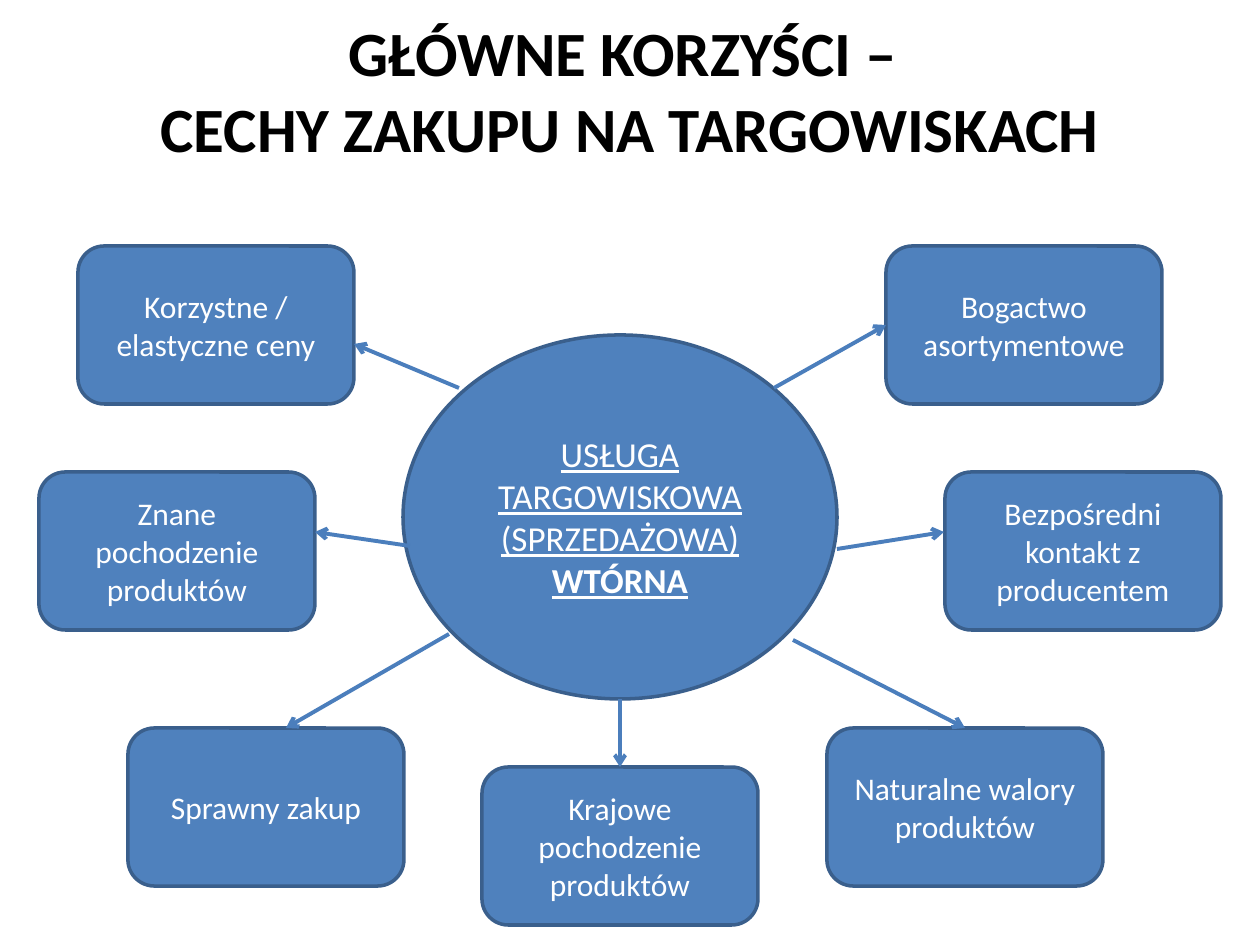
from dataclasses import dataclass
from typing import Optional

from lxml import etree
from pptx import Presentation
from pptx.dml.color import RGBColor
from pptx.enum import shapes, text
from pptx.oxml import ns
from pptx.util import Emu, Pt

PX_PER_INCH = 126
BOX_WIDTH, BOX_HEIGHT = 276, 158
FILL, OUTLINE, ARROW = "4F81BD", "3A5F8C", "4B7EBC"
WHITE, BLACK = "FFFFFF", "000000"
TOP, LEFT = 0, 1


@dataclass(frozen=True)
class Benefit:
    label: str
    left: int
    top: int
    arrow_start: tuple[int, int]
    arrow_end: tuple[int, int]
    joined_side: Optional[int] = None


BENEFITS = [
    Benefit("Korzystne / elastyczne ceny", 78, 246, (459, 388), (354, 344)),
    Benefit("Znane pochodzenie produktów", 39, 472, (410, 546), (315, 532)),
    Benefit("Bezpośredni kontakt z producentem", 945, 472, (837, 549), (944, 532)),
    Benefit("Bogactwo asortymentowe", 886, 246, (774, 388), (886, 325), LEFT),
    Benefit("Krajowe pochodzenie produktów", 482, 767, (620, 699), (620, 767), TOP),
    Benefit("Naturalne walory produktów", 827, 728, (793, 640), (965, 728), TOP),
    Benefit("Sprawny zakup", 128, 728, (449, 634), (286, 728)),
]


def px(length: int) -> Emu:
    return Emu(round(length * 914400 / PX_PER_INCH))


def color(value: str) -> RGBColor:
    return RGBColor.from_string(value)


def write(shape, paragraphs: list[str], size: int, font_color: str, **formats) -> None:
    """Fill a shape with centred paragraphs that share one format."""
    frame = shape.text_frame
    frame.word_wrap = True
    frame.vertical_anchor = text.MSO_ANCHOR.MIDDLE
    font_values = {"name": "Calibri", "size": Pt(size), **formats}
    for index, content in enumerate(paragraphs):
        paragraph = frame.add_paragraph() if index else frame.paragraphs[0]
        paragraph.text = content
        paragraph.alignment = text.PP_ALIGN.CENTER
        for run in paragraph.runs:
            run.font.color.rgb = color(font_color)
            for name, value in font_values.items():
                setattr(run.font, name, value)


def add_block(slide, kind, left: int, top: int, width: int, height: int):
    shape = slide.shapes.add_shape(kind, px(left), px(top), px(width), px(height))
    shape.shadow.inherit = False
    shape.fill.solid()
    shape.fill.fore_color.rgb = color(FILL)
    shape.line.color.rgb = color(OUTLINE)
    shape.line.width = Pt(2)
    return shape


def add_benefit(slide, benefit: Benefit):
    box = add_block(slide, shapes.MSO_SHAPE.ROUNDED_RECTANGLE,
                    benefit.left, benefit.top, BOX_WIDTH, BOX_HEIGHT)
    write(box, [benefit.label], 18, WHITE)
    return box


def add_arrow(slide, benefit: Benefit, box) -> None:
    points = [px(value) for value in benefit.arrow_start + benefit.arrow_end]
    arrow = slide.shapes.add_connector(shapes.MSO_CONNECTOR.STRAIGHT, *points)
    if benefit.joined_side is not None:
        arrow.end_connect(box, benefit.joined_side)
    arrow.line.color.rgb = color(ARROW)
    arrow.line.width = Pt(2.25)
    line = arrow.line._get_or_add_ln()
    etree.SubElement(line, ns.qn("a:tailEnd"), type="arrow")
    etree.SubElement(arrow._element.spPr, ns.qn("a:effectLst"))


def main() -> None:
    presentation = Presentation()
    presentation.slide_width = px(1260)
    presentation.slide_height = px(945)
    slide = presentation.slides.add_slide(presentation.slide_layouts[6])

    # Title
    title = slide.shapes.add_textbox(px(63), px(10), px(1134), px(158))
    write(title, ["GŁÓWNE KORZYŚCI – \nCECHY ZAKUPU NA TARGOWISKACH"],
          36, BLACK, bold=True)

    # Central service
    service = add_block(slide, shapes.MSO_SHAPE.OVAL, 403, 335, 434, 364)
    write(service, ["USŁUGA TARGOWISKOWA (SPRZEDAŻOWA)", "WTÓRNA"],
          20, WHITE, underline=True)
    service.text_frame.paragraphs[1].runs[0].font.bold = True

    # Benefits around it, then the arrows on top
    boxes = [add_benefit(slide, benefit) for benefit in BENEFITS]
    for benefit, box in zip(BENEFITS, boxes):
        add_arrow(slide, benefit, box)

    presentation.save("out.pptx")


if __name__ == "__main__":
    main()
